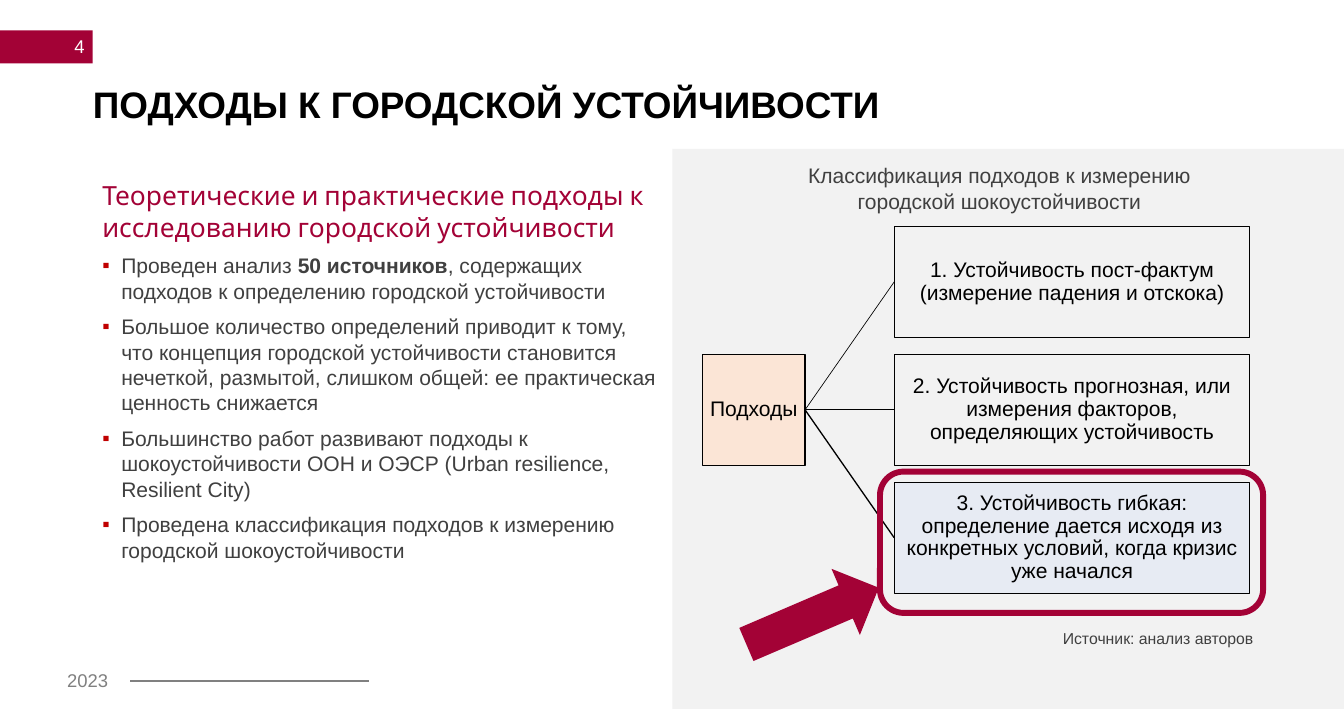
import lxml.etree
import pptx
import pptx.dml.color
import pptx.enum.shapes
import pptx.enum.text
import pptx.oxml.ns
import pptx.util

Pt = pptx.util.Pt
Align = pptx.enum.text.PP_ALIGN
Anchor = pptx.enum.text.MSO_ANCHOR
Preset = pptx.enum.shapes.MSO_SHAPE
qn = pptx.oxml.ns.qn

COLORS = {
    "crimson": "A30236",
    "bullet": "C00000",
    "panel": "F2F2F2",
    "peach": "FBE5D6",
    "pale blue": "E7EBF3",
    "black": "000000",
    "dark": "404040",
    "gray": "808080",
    "white": "FFFFFF",
}

HEADING = "Теоретические и практические подходы к исследованию городской устойчивости"
# Each bullet is a list of spans; every second span is bold
BULLETS = [
    ["Проведен анализ ", "50 источников",
     ", содержащих подходов к определению городской устойчивости"],
    ["Большое количество определений приводит к тому, что концепция городской "
     "устойчивости становится нечеткой, размытой, слишком общей: ее практическая "
     "ценность снижается"],
    ["Большинство работ развивают подходы к шокоустойчивости ООН и ОЭСР "
     "(Urban resilience, Resilient City)"],
    ["Проведена классификация подходов к измерению городской шокоустойчивости"],
]
# Text, fill and width of the connecting line
APPROACHES = [
    ("1. Устойчивость пост-фактум (измерение падения и отскока)", "panel", 0.5),
    ("2. Устойчивость прогнозная, или измерения факторов, определяющих устойчивость",
     "panel", 1),
    ("3. Устойчивость гибкая: определение дается исходя из конкретных условий, "
     "когда кризис уже начался", "pale blue", 1),
]

ROOT_LEFT, ROOT_WIDTH = 533.5, 77.8
NODE_LEFT, NODE_WIDTH, NODE_HEIGHT = 679, 270, 84.2
NODE_TOP, NODE_STEP = 172, 97.2


def rgb(name):
    return pptx.dml.color.RGBColor.from_string(COLORS[name])


def style_font(font, size, color, bold=False, face="Arial"):
    font.size = Pt(size)
    font.name = face
    font.bold = bold
    font.color.rgb = rgb(color)


def add_text(page, bounds, text, size, color, align=Align.LEFT, bold=False, face="Arial"):
    box = page.shapes.add_textbox(*map(Pt, bounds))
    frame = box.text_frame
    frame.word_wrap = True
    frame.text = text
    for para in frame.paragraphs:
        para.alignment = align
        for span in para.runs:
            style_font(span.font, size, color, bold, face)
    return frame


def add_block(page, preset, bounds, fill=None, line=None, width=1):
    block = page.shapes.add_shape(preset, *map(Pt, bounds))
    block.shadow.inherit = False
    if fill:
        block.fill.solid()
        block.fill.fore_color.rgb = rgb(fill)
    else:
        block.fill.background()
    if line:
        block.line.color.rgb = rgb(line)
        block.line.width = Pt(width)
    else:
        block.line.fill.background()
    return block


def add_line(page, start, end, color, width):
    line = page.shapes.add_connector(
        pptx.enum.shapes.MSO_CONNECTOR.STRAIGHT, *map(Pt, start + end))
    line.line.color.rgb = rgb(color)
    line.line.width = Pt(width)
    lxml.etree.SubElement(line._element.spPr, qn("a:effectLst"))


def add_node(page, left, top, width, text, fill):
    node = add_block(page, Preset.RECTANGLE, (left, top, width, NODE_HEIGHT), fill, "black")
    frame = node.text_frame
    frame.word_wrap = True
    frame.vertical_anchor = Anchor.MIDDLE
    frame.margin_left = frame.margin_right = Pt(0.8)
    frame.margin_top = frame.margin_bottom = Pt(0.8)
    frame.text = text
    para = frame.paragraphs[0]
    para.alignment = Align.CENTER
    para.line_spacing = 0.9
    style_font(para.runs[0].font, 16, "black")


def add_bullet(frame, spans):
    para = frame.add_paragraph()
    props = para._p.get_or_add_pPr()
    props.set("marL", str(Pt(14.4)))
    props.set("indent", str(Pt(-14.4)))
    tint = lxml.etree.SubElement(props, qn("a:buClr"))
    lxml.etree.SubElement(tint, qn("a:srgbClr"), val=COLORS["bullet"])
    lxml.etree.SubElement(props, qn("a:buFont"), typeface="Arial")
    lxml.etree.SubElement(props, qn("a:buChar"), char="▪")
    para.space_before = Pt(8)
    for index, text in enumerate(spans):
        span = para.add_run()
        span.text = text
        style_font(span.font, 16, "dark", bold=index % 2 == 1)


def add_frame_parts(page):
    # Page number tab and footer
    add_block(page, Preset.RECTANGLE, (0, 23, 70.3, 25.2), "crimson")
    number = add_text(page, (13, 21, 58.3, 28.8), "4", 14, "white", Align.RIGHT)
    number.vertical_anchor = Anchor.MIDDLE
    add_text(page, (43.9, 504.7, 48.2, 24.5), "2023", 14, "gray")
    add_line(page, (99, 517.5), (280.5, 517.5), "gray", 1.5)

    # Title
    title = add_text(page, (70.6, 65.5, 831.6, 28), "ПОДХОДЫ К ГОРОДСКОЙ УСТОЙЧИВОСТИ",
                     28, "black", bold=True)
    title.margin_left = title.margin_right = title.margin_top = title.margin_bottom = 0
    title.paragraphs[0].line_spacing = 0.9


def add_findings(page):
    frame = add_text(page, (70.6, 132.5, 439.2, 340.6), HEADING, 20, "crimson", face="Cabin")
    for spans in BULLETS:
        add_bullet(frame, spans)


def add_classification(page):
    # Panel and captions
    add_block(page, Preset.RECTANGLE, (510.5, 113, 510, 425.5), "panel")
    add_text(page, (545.8, 120.2, 426.2, 46), "Классификация подходов к измерению\n"
             "городской шокоустойчивости", 16, "dark", Align.CENTER)
    add_text(page, (532.8, 473.8, 426.2, 21.8), "Источник: анализ авторов",
             12, "dark", Align.RIGHT)

    # Tree of approaches
    root_top = NODE_TOP + NODE_STEP
    add_node(page, ROOT_LEFT, root_top, ROOT_WIDTH, "Подходы", "peach")
    joint = (ROOT_LEFT + ROOT_WIDTH, root_top + NODE_HEIGHT / 2)
    for index, (text, fill, width) in enumerate(APPROACHES):
        top = NODE_TOP + index * NODE_STEP
        add_line(page, joint, (NODE_LEFT, top + NODE_HEIGHT / 2), "black", width)
        add_node(page, NODE_LEFT, top, NODE_WIDTH, text, fill)

    # Highlight of the third approach
    add_block(page, Preset.ROUNDED_RECTANGLE, (668.2, 358.2, 290.9, 107.3),
              line="crimson", width=4.5)
    arrow = add_block(page, Preset.RIGHT_ARROW, (562.3, 440.6, 109.4, 54.7), "crimson")
    arrow.rotation = 336.8


def main():
    deck = pptx.Presentation()
    deck.slide_width = Pt(1020.5)
    deck.slide_height = Pt(538.5)
    page = deck.slides.add_slide(deck.slide_layouts[6])
    add_classification(page)
    add_frame_parts(page)
    add_findings(page)
    deck.save("out.pptx")


if __name__ == "__main__":
    main()
